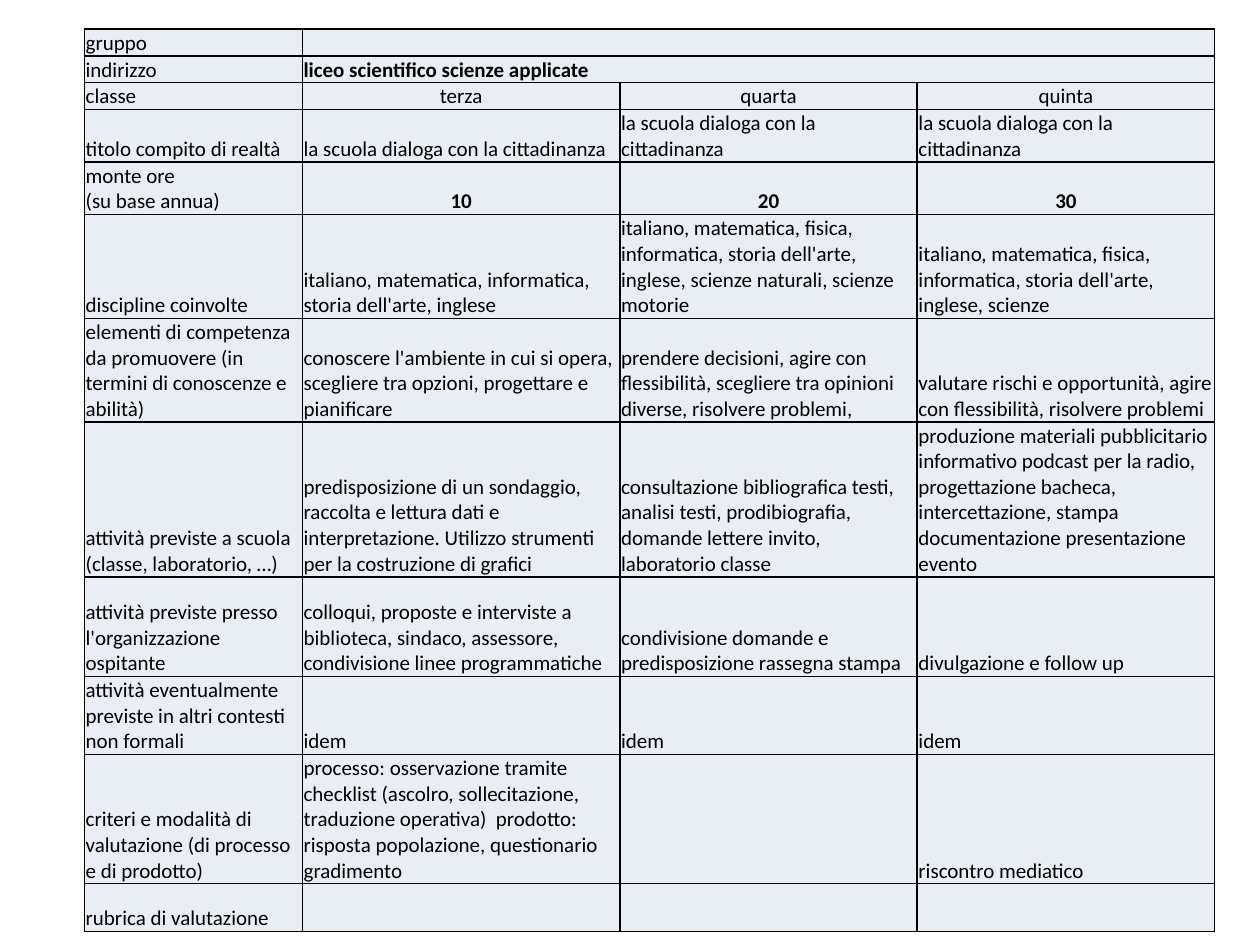
from lxml import etree
from pptx import Presentation
from pptx import util as u
from pptx.dml import color
from pptx.enum import text
from pptx.oxml import ns

COLUMN_WIDTHS = [1.73, 2.52, 2.36, 2.36]
ROW_HEIGHTS = [0.2, 0.2, 0.2, 0.4, 0.4, 0.79, 0.79, 1.18, 0.79, 0.59, 0.98, 0.38]
CENTRED_ROWS = {"classe", "monte ore\n(su base annua)"}
BOLD_ROWS = {"indirizzo", "monte ore\n(su base annua)"}
DIALOGO = "la scuola dialoga con la cittadinanza"

PROGETTO = [
    ["gruppo", ""],
    ["indirizzo", "liceo scientifico scienze applicate"],
    ["classe", "terza", "quarta", "quinta"],
    ["titolo compito di realtà"] + [DIALOGO] * 3,
    ["monte ore\n(su base annua)", "10", "20", "30"],
    ["discipline coinvolte",
     "italiano, matematica, informatica, storia dell'arte, inglese",
     "italiano, matematica, fisica, informatica, storia dell'arte, inglese, "
     "scienze naturali, scienze motorie",
     "italiano, matematica, fisica, informatica, storia dell'arte, inglese, scienze"],
    ["elementi di competenza da promuovere (in termini di conoscenze e abilità)",
     "conoscere l'ambiente in cui si opera, scegliere tra opzioni, progettare e pianificare",
     "prendere decisioni, agire con flessibilità, scegliere tra opinioni diverse, "
     "risolvere problemi,",
     "valutare rischi e opportunità, agire con flessibilità, risolvere problemi"],
    ["attività previste a scuola (classe, laboratorio, …)",
     "predisposizione di un sondaggio, raccolta e lettura dati e interpretazione. "
     "Utilizzo strumenti per la costruzione di grafici",
     "consultazione bibliografica testi, analisi testi, prodibiografia, "
     "domande lettere invito, laboratorio classe",
     "produzione materiali pubblicitario informativo podcast per la radio, "
     "progettazione bacheca, intercettazione, stampa documentazione presentazione evento"],
    ["attività previste presso l'organizzazione ospitante",
     "colloqui, proposte e interviste a biblioteca, sindaco, assessore, "
     "condivisione linee programmatiche",
     "condivisione domande e predisposizione rassegna stampa",
     "divulgazione e follow up"],
    ["attività eventualmente previste in altri contesti non formali"] + ["idem"] * 3,
    ["criteri e modalità di valutazione (di processo e di prodotto)",
     "processo: osservazione tramite checklist (ascolro, sollecitazione, "
     "traduzione operativa)  prodotto: risposta popolazione, questionario gradimento",
     "",
     "riscontro mediatico"],
    ["rubrica di valutazione", "", "", ""],
]


def rgb(hex_code):
    return color.RGBColor.from_string(hex_code)


def apply(target, formats):
    for name, value in formats.items():
        setattr(target, name, value)


class SlideWriter:
    ink = "000000"
    cell_fill = "E9EDF4"
    font = {"name": "Calibri", "size": u.Pt(12)}
    cell_format = {
        "vertical_anchor": text.MSO_ANCHOR.BOTTOM,
        "margin_left": u.Inches(0.01),
        "margin_right": u.Inches(0.01),
        "margin_top": u.Inches(0.01),
        "margin_bottom": 0,
    }
    table_format = {"first_row": False, "horz_banding": False}

    def __init__(self, slide):
        self.slide = slide

    def borders(self, cell):
        properties = cell._tc.get_or_add_tcPr()
        for side in ("a:lnL", "a:lnR", "a:lnT", "a:lnB"):
            edge = etree.SubElement(properties, ns.qn(side), w=str(u.Pt(1)))
            paint = etree.SubElement(edge, ns.qn("a:solidFill"))
            etree.SubElement(paint, ns.qn("a:srgbClr"), val=self.ink)

    def cell(self, cell, wording, bold, align):
        self.borders(cell)
        apply(cell, self.cell_format)
        cell.fill.solid()
        cell.fill.fore_color.rgb = rgb(self.cell_fill)
        cell.text = wording
        for paragraph in cell.text_frame.paragraphs:
            paragraph.alignment = align
            for run in paragraph.runs:
                apply(run.font, {**self.font, "bold": bold})
                run.font.color.rgb = rgb(self.ink)
            if not paragraph.runs:
                size = str(int(self.font["size"].pt * 100))
                etree.SubElement(paragraph._p, ns.qn("a:endParaRPr"), sz=size)

    def table(self, left, top, rows, widths, heights):
        frame = self.slide.shapes.add_table(
            len(heights), len(widths), u.Inches(left), u.Inches(top),
            u.Inches(sum(widths)), u.Inches(sum(heights)))
        grid = frame.table
        apply(grid, self.table_format)
        for column, width in zip(grid.columns, widths):
            column.width = u.Inches(width)
        for row, height in zip(grid.rows, heights):
            row.height = u.Inches(height)
        last = len(widths) - 1
        for r, entries in enumerate(rows):
            label = entries[0]
            for c in range(len(widths)):
                wording = entries[c] if c < len(entries) else ""
                centred = c > 0 and label in CENTRED_ROWS
                align = text.PP_ALIGN.CENTER if centred else text.PP_ALIGN.LEFT
                self.cell(grid.cell(r, c), wording, c > 0 and label in BOLD_ROWS, align)
            if len(entries) <= last:
                grid.cell(r, len(entries) - 1).merge(grid.cell(r, last))


def main():
    deck = Presentation()
    apply(deck, {"slide_width": u.Inches(10), "slide_height": u.Inches(7.5)})
    writer = SlideWriter(deck.slides.add_slide(deck.slide_layouts[6]))
    writer.table(0.67, 0.23, PROGETTO, COLUMN_WIDTHS, ROW_HEIGHTS)
    deck.save("out.pptx")


if __name__ == "__main__":
    main()
